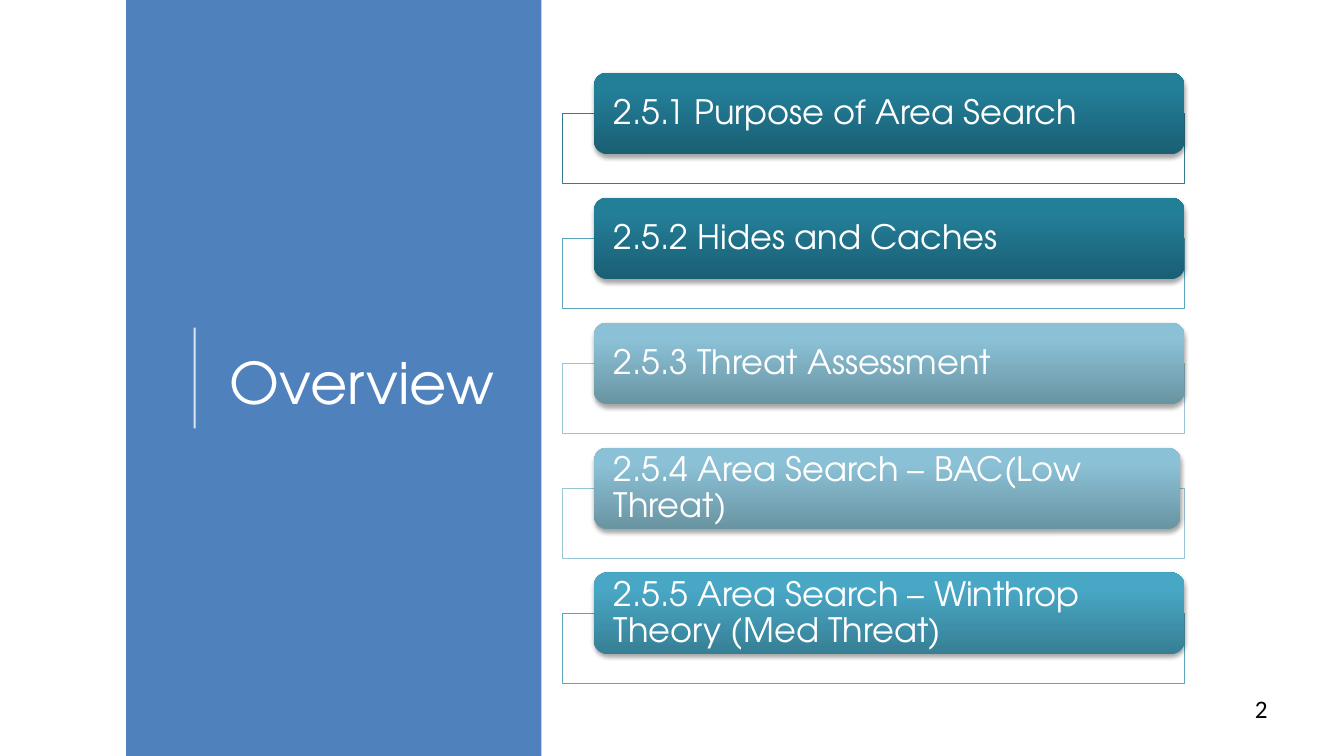
import dataclasses

import pptx
import pptx.dml.color
import pptx.enum.shapes
import pptx.enum.text
import pptx.oxml
import pptx.oxml.ns
import pptx.util
from pptx.util import Inches

SHAPE = pptx.enum.shapes.MSO_SHAPE
ALIGN = pptx.enum.text.PP_ALIGN
ANCHOR = pptx.enum.text.MSO_ANCHOR
qn = pptx.oxml.ns.qn


@dataclasses.dataclass(frozen=True)
class Theme:
    font: str = "TeX Gyre Adventor"
    number_font: str = "Calibri"
    title_size: int = 41
    topic_size: int = 24
    number_size: int = 18
    panel: str = "4F81BD"
    white: str = "FFFFFF"
    black: str = "000000"
    # Gradient stops run from the bottom of a card to its top.
    dark: tuple = ("1A5F74", "237E98", "217F9B")
    pale: tuple = ("6994A2", "8BC1D6", "89C3D9")
    mid: tuple = ("377F95", "48A7C5", "46A9C8")
    frame_dark: str = "337B90"
    frame_mid: str = "5AA6BE"
    frame_pale: str = "99C5D5"


THEME = Theme()

# Text, card gradient, frame colour, card width
TOPICS = [
    ("2.5.1 Purpose of Area Search", THEME.dark, THEME.frame_dark, 5.86),
    ("2.5.2 Hides and Caches", THEME.dark, THEME.frame_mid, 5.86),
    ("2.5.3 Threat Assessment", THEME.pale, THEME.frame_pale, 5.86),
    ("2.5.4 Area Search – BAC(Low Threat)", THEME.pale, THEME.frame_pale, 5.82),
    ("2.5.5 Area Search – Winthrop Theory (Med Threat)", THEME.mid,
     THEME.frame_mid, 5.86),
]
FIRST_TOP, PITCH = 0.72, 1.24


def rgb(color):
    return pptx.dml.color.RGBColor.from_string(color)


def parse_dml(xml):
    """Build a DrawingML element from markup that uses the a: prefix."""
    tag, rest = xml.split(" ", 1)
    return pptx.oxml.parse_xml(f"{tag} {pptx.oxml.ns.nsdecls('a')} {rest}")


def set_alpha(sp, percent):
    """Make the first solid colour of a shape or line partly transparent."""
    color = next(sp._element.spPr.iter(qn("a:srgbClr")))
    color.append(parse_dml(f'<a:alpha val="{percent * 1000}"/>'))


def add_block(s, kind, left, top, width, height, fill):
    sp = s.shapes.add_shape(kind, Inches(left), Inches(top), Inches(width), Inches(height))
    sp.shadow.inherit = False
    sp.fill.solid()
    sp.fill.fore_color.rgb = rgb(fill)
    sp.line.fill.background()
    return sp


def set_gradient(sp, colors):
    stops = "".join(f'<a:gs pos="{pos}"><a:srgbClr val="{color}"/></a:gs>'
                    for pos, color in zip((0, 80000, 100000), colors))
    spPr = sp._element.spPr
    spPr.replace(spPr.find(qn("a:solidFill")), parse_dml(
        f'<a:gradFill rotWithShape="1"><a:gsLst>{stops}</a:gsLst>'
        '<a:lin ang="16200000" scaled="0"/></a:gradFill>'))


def set_shadow(sp):
    blur, distance = pptx.util.Pt(3.1), pptx.util.Pt(1.8)
    sp._element.spPr.find(qn("a:effectLst")).append(parse_dml(
        f'<a:outerShdw blurRad="{blur}" dist="{distance}" dir="5400000" rotWithShape="0">'
        f'<a:srgbClr val="{THEME.black}"><a:alpha val="35000"/></a:srgbClr></a:outerShdw>'))


def write(sp, text, size, color, font=THEME.font, align=ALIGN.LEFT, anchor=ANCHOR.MIDDLE):
    tf = sp.text_frame
    tf.word_wrap = True
    tf.vertical_anchor = anchor
    p = tf.paragraphs[0]
    p.text = text
    p.alignment = align
    r = p.runs[0]
    r.font.name = font
    r.font.size = pptx.util.Pt(size)
    r.font.color.rgb = rgb(color)
    return tf


def add_label(s, left, top, width, height, *args, **kwargs):
    sp = s.shapes.add_textbox(Inches(left), Inches(top), Inches(width), Inches(height))
    write(sp, *args, **kwargs)


def add_divider(s, x, top, bottom):
    line = s.shapes.add_connector(pptx.enum.shapes.MSO_CONNECTOR.STRAIGHT,
                                  Inches(x), Inches(bottom), Inches(x), Inches(top))
    line.line.color.rgb = rgb(THEME.white)
    line.line.width = pptx.util.Pt(1.5)
    set_alpha(line, 80)
    line._element.spPr.append(parse_dml("<a:effectLst />"))


def add_topic(s, top, text, gradient, frame_color, width):
    """Add an outlined frame with a gradient card overlapping its top edge."""
    frame = add_block(s, SHAPE.RECTANGLE, 5.58, top + 0.41, 6.17, 0.69, THEME.white)
    set_alpha(frame, 90)
    frame.line.color.rgb = rgb(frame_color)
    frame.line.width = pptx.util.Pt(0.75)

    card = add_block(s, SHAPE.ROUNDED_RECTANGLE, 5.89, top, width, 0.81, gradient[0])
    card.adjustments[0] = 0.167
    set_gradient(card, gradient)
    set_shadow(card)
    tf = write(card, text, THEME.topic_size, THEME.white)
    tf.margin_left = tf.margin_right = Inches(0.16)
    tf.margin_top = tf.margin_bottom = 0
    tf.paragraphs[0].line_spacing = 0.9


def main():
    prs = pptx.Presentation()
    prs.slide_width, prs.slide_height = Inches(13.33), Inches(7.5)
    s = prs.slides.add_slide(prs.slide_layouts[6])

    add_block(s, SHAPE.RECTANGLE, 1.25, 0, 4.12, 7.5, THEME.panel)
    add_divider(s, 1.93, 3.25, 4.25)
    add_label(s, 2.09, 0.78, 3, 6.02, "Overview", THEME.title_size, THEME.white,
              align=ALIGN.CENTER)
    for i, topic in enumerate(TOPICS):
        add_topic(s, FIRST_TOP + i * PITCH, *topic)
    add_label(s, 9.56, 6.83, 3.11, 0.4, "2", THEME.number_size, THEME.black,
              font=THEME.number_font, align=ALIGN.RIGHT, anchor=ANCHOR.TOP)

    prs.save("out.pptx")


if __name__ == "__main__":
    main()
